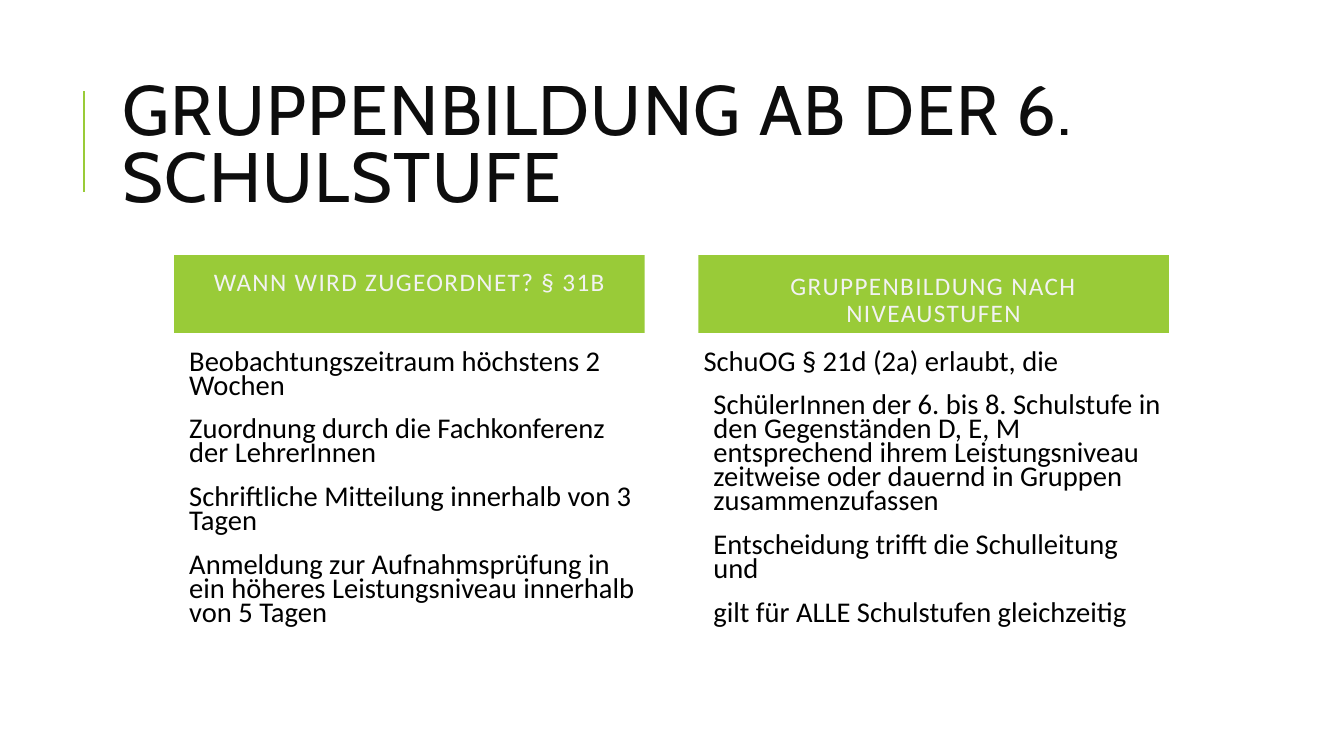
import pptx
import pptx.dml.color
import pptx.enum.shapes
import pptx.enum.text
import pptx.oxml.ns
import pptx.util
from dataclasses import dataclass

Cm = pptx.util.Cm
Pt = pptx.util.Pt
Anchor = pptx.enum.text.MSO_ANCHOR
Align = pptx.enum.text.PP_ALIGN

TITLE = "GRUPPENBILDUNG AB DER 6. SCHULSTUFE"
COLS = [
    {
        "head": "WANN WIRD ZUGEORDNET? § 31B",
        "foot": 0.91,
        "body": [
            ("Beobachtungszeitraum höchstens 2 Wochen", True),
            ("Zuordnung durch die Fachkonferenz der LehrerInnen", True),
            ("Schriftliche Mitteilung innerhalb von 3 Tagen", True),
            ("Anmeldung zur Aufnahmsprüfung in ein höheres Leistungsniveau "
             "innerhalb von 5 Tagen", True),
        ],
    },
    {
        "head": "GRUPPENBILDUNG NACH NIVEAUSTUFEN",
        "foot": 0.13,
        "body": [
            ("SchuOG § 21d (2a) erlaubt, die", False),
            ("SchülerInnen der 6. bis 8. Schulstufe in den Gegenständen D, E, M "
             "entsprechend ihrem Leistungsniveau zeitweise oder dauernd in "
             "Gruppen zusammenzufassen", True),
            ("Entscheidung trifft die Schulleitung und", True),
            ("gilt für ALLE Schulstufen gleichzeitig", True),
        ],
    },
]


@dataclass(frozen=True)
class Theme:
    green: str = "99CB38"
    ink: str = "0D0D0D"
    black: str = "000000"
    pale: str = "F2F2F2"
    title: float = 50
    head: float = 18
    body: float = 20.4
    face: str = "Cabin"
    text: str = "Calibri"


THEME = Theme()
LEFT, PITCH, WIDTH = 4.39, 13.21, 11.86
HEAD_TOP, HEAD_HIGH = 6.43, 1.96
BODY_TOP, BODY_HIGH = 8.74, 7.21
PAD, INDENT = 0.13, 0.25


def tint(name):
    return pptx.dml.color.RGBColor.from_string(name)


def frame(shape, anchor, side=PAD, foot=PAD):
    box = shape.text_frame
    box.word_wrap = True
    box.vertical_anchor = anchor
    box.margin_left = box.margin_right = Cm(side)
    box.margin_top, box.margin_bottom = Cm(PAD), Cm(foot)
    return box


def write(para, text, face, size, color, lead, track=0):
    para.line_spacing = lead
    run = para.add_run()
    run.text = text
    run.font.name = face
    run.font.size = Pt(size)
    run.font.color.rgb = tint(color)
    if track:
        run.font._element.set("spc", str(track))


def add_title(slide):
    rule = slide.shapes.add_connector(
        pptx.enum.shapes.MSO_CONNECTOR.STRAIGHT,
        Cm(2.11), Cm(4.83), Cm(2.11), Cm(2.29))
    rule.line.color.rgb = tint(THEME.green)
    rule.line.width = Pt(1.5)
    props = rule._element.spPr
    props.append(props.makeelement(pptx.oxml.ns.qn("a:effectLst"), {}))
    box = slide.shapes.add_textbox(Cm(2.84), Cm(2.11), Cm(24.71), Cm(3.3))
    para = frame(box, Anchor.MIDDLE, side=0.25).paragraphs[0]
    write(para, TITLE, THEME.face, THEME.title, THEME.ink, 0.8, 100)


def add_head(slide, left, col):
    bar = slide.shapes.add_shape(
        pptx.enum.shapes.MSO_SHAPE.RECTANGLE,
        Cm(left), Cm(HEAD_TOP), Cm(WIDTH), Cm(HEAD_HIGH))
    bar.shadow.inherit = False
    bar.fill.solid()
    bar.fill.fore_color.rgb = tint(THEME.green)
    bar.line.fill.background()
    para = frame(bar, Anchor.BOTTOM, foot=col["foot"]).paragraphs[0]
    para.alignment = Align.CENTER
    write(para, col["head"], THEME.text, THEME.head, THEME.pale, 0.9, 100)


def add_body(slide, left, col):
    shape = slide.shapes.add_textbox(
        Cm(left), Cm(BODY_TOP), Cm(WIDTH), Cm(BODY_HIGH))
    box = frame(shape, Anchor.TOP)
    for place, (text, inset) in enumerate(col["body"]):
        para = box.add_paragraph() if place else box.paragraphs[0]
        if place:
            para.space_before = Pt(12)
        para.space_after = Pt(2)
        if inset:
            para._p.get_or_add_pPr().set("marL", str(Cm(INDENT)))
        write(para, text, THEME.text, THEME.body, THEME.black, 0.7)


def main():
    deck = pptx.Presentation()
    deck.slide_width, deck.slide_height = Cm(33.87), Cm(19.05)
    slide = deck.slides.add_slide(deck.slide_layouts[6])
    add_title(slide)
    for place, col in enumerate(COLS):
        left = LEFT + place * PITCH
        add_head(slide, left, col)
        add_body(slide, left, col)
    deck.save("out.pptx")


if __name__ == "__main__":
    main()
